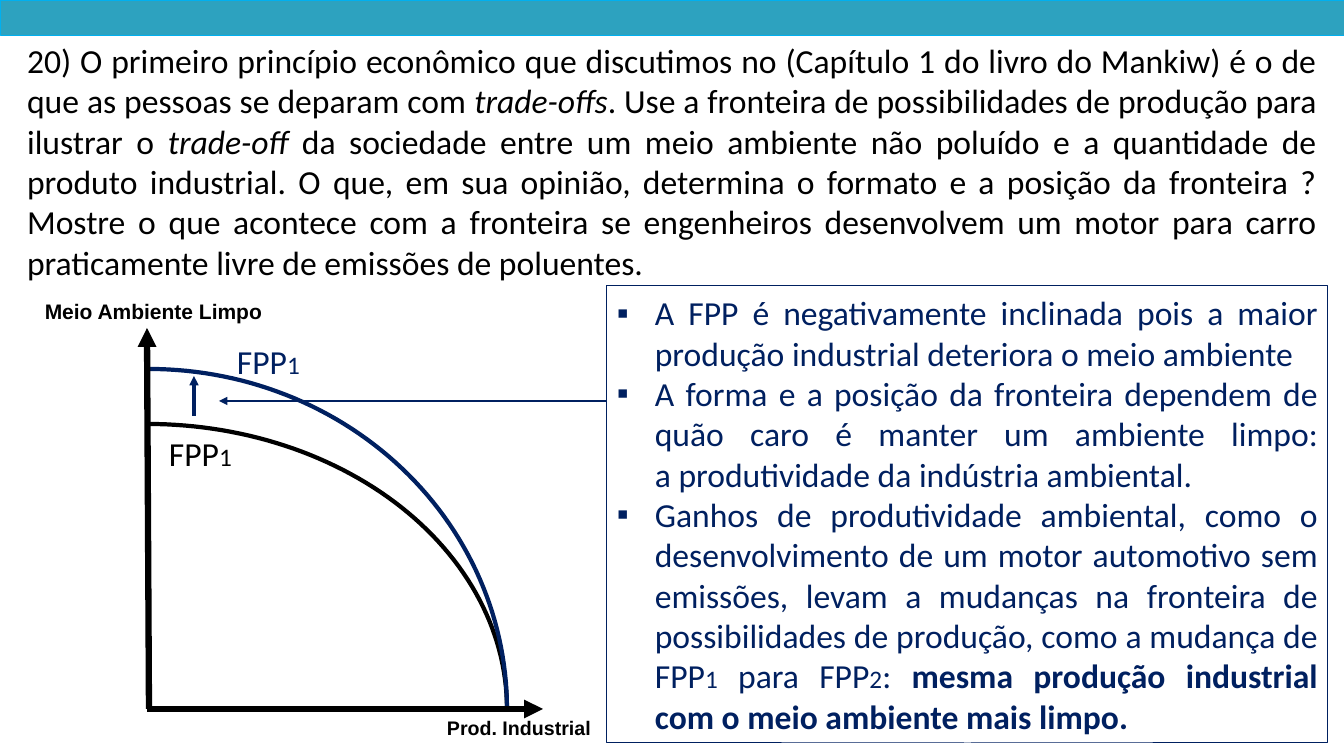
import math

import pptx
import pptx.dml.color
import pptx.enum.shapes
import pptx.enum.text
import pptx.oxml.ns
import pptx.util
from lxml import etree

# Content: a paragraph is a list of (text, format changes)
COLORS = {"band": "2DA2BF", "band_edge": "00B0F0", "navy": "002060", "black": "000000"}
ITALIC, SMALL, BOLD = {"italic": True}, {"size": 18}, {"bold": True}

QUESTION = [
    ("20) O primeiro princípio econômico que discutimos no (Capítulo 1 do livro do Mankiw) "
     "é o de que as pessoas se deparam com ", {}),
    ("trade-offs", ITALIC),
    (". Use a fronteira de possibilidades de produção para ilustrar o ", {}),
    ("trade-off", ITALIC),
    (" da sociedade entre um meio ambiente não poluído e a quantidade de produto industrial. "
     "O que, em sua opinião, determina o formato e a posição da fronteira ? Mostre o que "
     "acontece com a fronteira se engenheiros desenvolvem um motor para carro praticamente "
     "livre de emissões de poluentes.", {}),
]
ANSWERS = [
    [("A FPP é negativamente inclinada pois a maior produção industrial deteriora o meio "
      "ambiente", {})],
    [("A forma e a posição da fronteira dependem de quão caro é manter um ambiente limpo:", {}),
     ("\n", {}),
     ("a produtividade da indústria ambiental.", {})],
    [("Ganhos de produtividade ambiental, como o desenvolvimento de um motor automotivo sem "
      "emissões, levam a mudanças na fronteira de possibilidades de produção, como a mudança "
      "de FPP", {}),
     ("1", SMALL), (" para FPP", {}), ("2", SMALL), (": ", {}),
     ("mesma produção industrial com o meio ambiente mais limpo.", BOLD)],
]
CURVE_NAME = [("FPP", {}), ("1", SMALL)]

# Lengths in px
BAND = (0, 0, 1344, 35)
QUESTION_BOX = (17, 35, 1310, 258)
ANSWER_BOX = (607, 285, 721, 458)
CURVES = [  # left, top, right, bottom, color
    (147, 424, 507, 709, "black"),
    (149, 369, 507, 709, "navy"),
]
ARROWS = [  # start x, start y, end x, end y, color, width in points
    (147, 709, 543, 709, "black", 4.5),
    (149, 709, 147, 328, "black", 4.5),
    (194, 416, 194, 376, "navy", 2.25),
    (607, 401, 219, 401, "navy", 1),
]
LABELS = [  # box, spans, font, size, bold, color, wrap, alignment
    ((21, 294, 265, 35), [("Meio Ambiente Limpo", {})], "Arial", 15, True, "black", True, "CENTER"),
    ((436, 711, 166, 34), [("Prod. Industrial", {})], "Arial", 14, True, "black", True, "CENTER"),
    ((159, 428, 84, 50), CURVE_NAME, "Calibri", 24, False, "black", False, "LEFT"),
    ((227, 336, 84, 50), CURVE_NAME, "Calibri", 24, False, "navy", False, "LEFT"),
]
CURVE_STEPS = 60
INDENT = 38
EMU_PER_PX = 914400 / 100.8

deck = pptx.Presentation()
ANCHOR = pptx.enum.text.MSO_ANCHOR
ALIGN = pptx.enum.text.PP_ALIGN


def emu(length):
    return round(length * EMU_PER_PX)


def scaled(lengths):
    return [emu(length) for length in lengths]


def rgb(name):
    return pptx.dml.color.RGBColor.from_string(COLORS[name])


def set_line(shape, color, width):
    shape.line.color.rgb = rgb(color)
    shape.line.width = pptx.util.Pt(width)


def write(para, spans, font, size, color, bold=False, align="JUSTIFY"):
    para.alignment = getattr(ALIGN, align)
    base = {"name": font, "size": size, "bold": bold, "italic": False}
    for text, changes in spans:
        if text == "\n":
            para.add_line_break()
            continue
        span = para.add_run()
        span.text = text
        values = {**base, **changes}
        values["size"] = pptx.util.Pt(values["size"])
        for key, value in values.items():
            setattr(span.font, key, value)
        span.font.color.rgb = rgb(color)


def set_frame(shape, wrap, anchor):
    frame = shape.text_frame
    values = {"auto_size": pptx.enum.text.MSO_AUTO_SIZE.NONE,
              "word_wrap": wrap, "vertical_anchor": anchor}
    for key, value in values.items():
        setattr(frame, key, value)
    return frame


def add_rectangle(box):
    shape = page.shapes.add_shape(pptx.enum.shapes.MSO_SHAPE.RECTANGLE, *scaled(box))
    shape.shadow.inherit = False
    return shape


def add_child(parent, tag, **attributes):
    return etree.SubElement(parent, pptx.oxml.ns.qn(tag), attributes)


# Page and top band
deck.slide_width, deck.slide_height = scaled((1344, 756))
page = deck.slides.add_slide(deck.slide_layouts[5])
band = add_rectangle(BAND)
band.fill.solid()
band.fill.fore_color.rgb = rgb("band")
set_line(band, "band_edge", 0.5)

# Question
question = page.shapes.title
question.left, question.top, question.width, question.height = scaled(QUESTION_BOX)
para = set_frame(question, True, ANCHOR.TOP).paragraphs[0]
para.space_before = pptx.util.Pt(4)
write(para, QUESTION, "Calibri", 24, "black")

# Answers
answer_box = add_rectangle(ANSWER_BOX)
answer_box.fill.background()
set_line(answer_box, "navy", 0.75)
frame = set_frame(answer_box, True, ANCHOR.MIDDLE)
for index, spans in enumerate(ANSWERS):
    para = frame.add_paragraph() if index else frame.paragraphs[0]
    write(para, spans, "Calibri", 24, "navy")
    properties = para._p.get_or_add_pPr()
    properties.set("marL", str(emu(INDENT)))
    properties.set("indent", str(-emu(INDENT)))
    add_child(properties, "a:buFont", typeface="Arial")
    add_child(properties, "a:buChar", char="▪")

# Production frontiers: quarter ellipses around the axis origin
for left, top, right, bottom, color in CURVES:
    angles = [math.pi / 2 * step / CURVE_STEPS for step in range(CURVE_STEPS + 1)]
    points = [scaled((left + (right - left) * math.sin(angle),
                      bottom - (bottom - top) * math.cos(angle))) for angle in angles]
    builder = page.shapes.build_freeform(*points[0])
    builder.add_line_segments(points[1:], close=False)
    curve = builder.convert_to_shape()
    curve.shadow.inherit = False
    curve.fill.background()
    set_line(curve, color, 3)

# Axes and arrows
for *ends, color, width in ARROWS:
    arrow = page.shapes.add_connector(pptx.enum.shapes.MSO_CONNECTOR.STRAIGHT, *scaled(ends))
    set_line(arrow, color, width)
    add_child(arrow.line._get_or_add_ln(), "a:tailEnd", type="triangle")
    add_child(arrow._element.spPr, "a:effectLst")

# Labels
for box, spans, font, size, bold, color, wrap, align in LABELS:
    label = page.shapes.add_textbox(*scaled(box))
    para = set_frame(label, wrap, ANCHOR.TOP).paragraphs[0]
    write(para, spans, font, size, color, bold, align)

deck.save("out.pptx")
